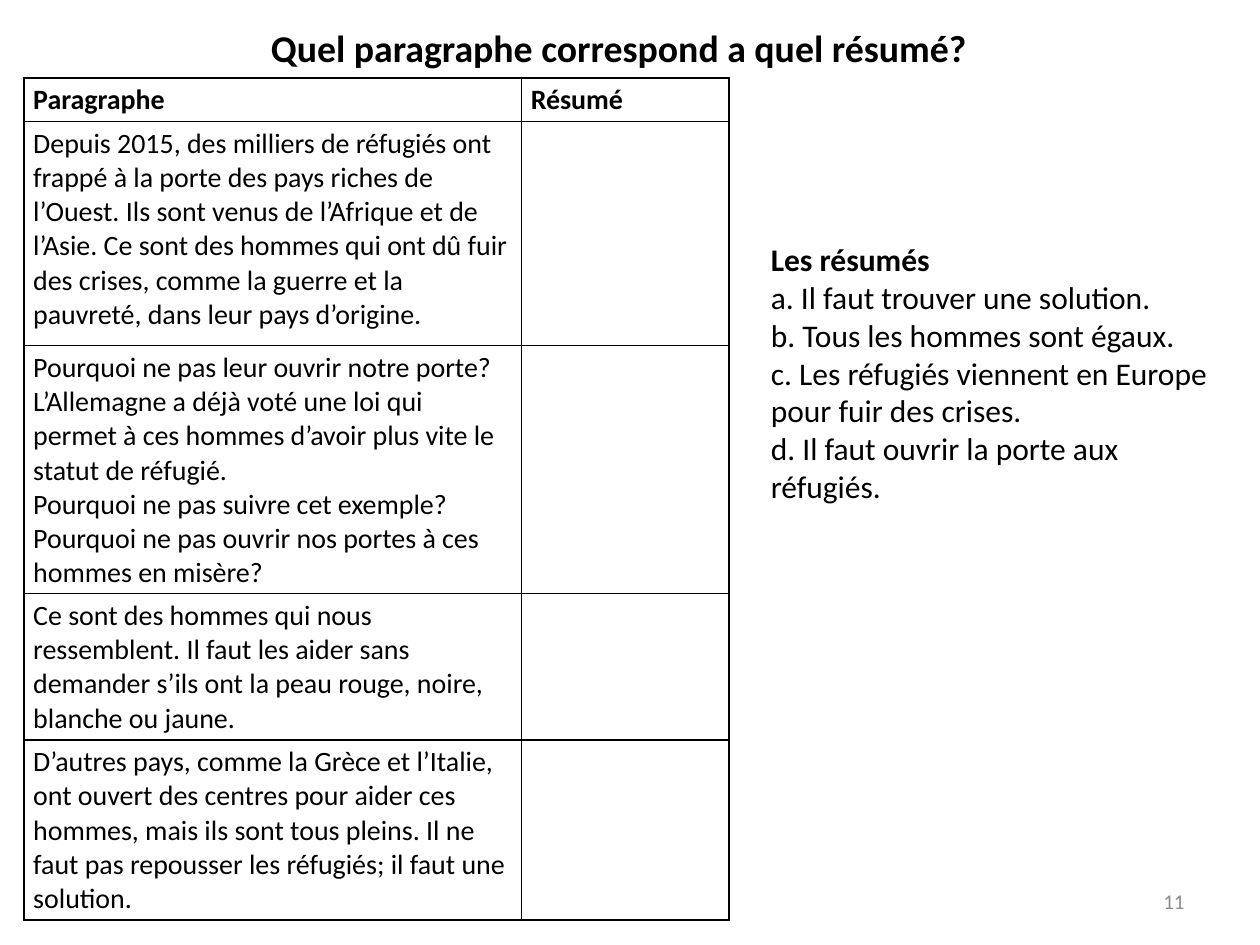
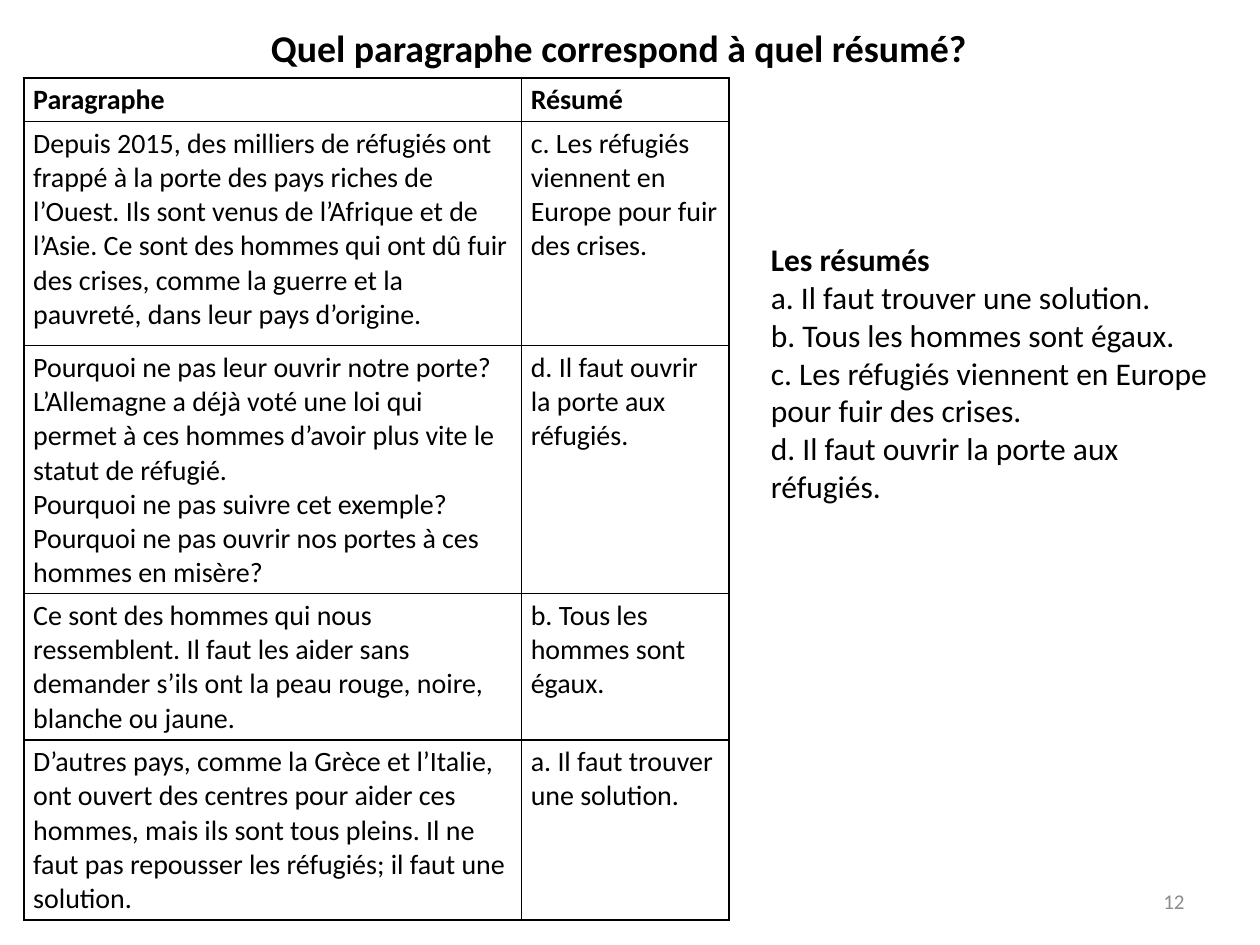
from lxml.etree import SubElement
from pptx import Presentation
from pptx.dml.color import RGBColor
from pptx.enum.text import MSO_ANCHOR, PP_ALIGN
from pptx.oxml.ns import qn
from pptx.util import Cm, Pt

FONT = "Calibri"
BLACK, GREY, WHITE = "000000", "8C8C8C", "FFFFFF"

# Shared wording
HEADERS = ["Paragraphe", "Résumé"]
PARAGRAPHS = [
    ["Depuis 2015, des milliers de réfugiés ont frappé à la porte des pays "
     "riches de l’Ouest. Ils sont venus de l’Afrique et de l’Asie. Ce sont "
     "des hommes qui ont dû fuir des crises, comme la guerre et la pauvreté, "
     "dans leur pays d’origine."],
    ["Pourquoi ne pas leur ouvrir notre porte? L’Allemagne a déjà voté une "
     "loi qui permet à ces hommes d’avoir plus vite le statut de réfugié.",
     "Pourquoi ne pas suivre cet exemple? Pourquoi ne pas ouvrir nos portes "
     "à ces hommes en misère?"],
    ["Ce sont des hommes qui nous ressemblent. Il faut les aider sans "
     "demander s’ils ont la peau rouge, noire, blanche ou jaune."],
    ["D’autres pays, comme la Grèce et l’Italie, ont ouvert des centres pour "
     "aider ces hommes, mais ils sont tous pleins. Il ne faut pas repousser "
     "les réfugiés; il faut une solution."],
]
SUMMARIES = {
    "a": "a. Il faut trouver une solution.",
    "b": "b. Tous les hommes sont égaux.",
    "c": "c. Les réfugiés viennent en Europe pour fuir des crises.",
    "d": "d. Il faut ouvrir la porte aux réfugiés.",
}
ANSWERS = "cdba"

COL_WIDTHS = [10.03, 4.19]
ROW_HEIGHTS = [0.88, 4.52, 5, 2.95, 3.63]


def rgb(value):
    return RGBColor.from_string(value)


def write(tf, lines, size=16, color=BLACK, bold=False, heading=False,
          align=PP_ALIGN.LEFT):
    """Write one paragraph per line; heading makes only the first one bold."""
    for i, line in enumerate(lines):
        p = tf.paragraphs[0] if i == 0 else tf.add_paragraph()
        p.alignment = align
        r = p.add_run()
        r.text = line
        r.font.name = FONT
        r.font.size = Pt(size)
        r.font.bold = bold or (heading and i == 0)
        r.font.color.rgb = rgb(color)


class Deck:
    def __init__(self):
        self.prs = Presentation()
        self.prs.slide_width, self.prs.slide_height = Cm(25.4), Cm(19.05)
        self.s = None

    def new_slide(self):
        self.s = self.prs.slides.add_slide(self.prs.slide_layouts[6])
        fill = self.s.background.fill
        fill.solid()
        fill.fore_color.rgb = rgb(WHITE)

    def text(self, x, y, w, h, lines, anchor=MSO_ANCHOR.TOP, **style):
        sp = self.s.shapes.add_textbox(Cm(x), Cm(y), Cm(w), Cm(h))
        tf = sp.text_frame
        tf.word_wrap = True
        tf.vertical_anchor = anchor
        write(tf, lines, **style)

    def title(self, text):
        self.text(0.48, 0.33, 24, 1.24, [text], MSO_ANCHOR.MIDDLE,
                  size=21.6, bold=True, align=PP_ALIGN.CENTER)

    def number(self, n):
        self.text(18.21, 17.65, 5.92, 1.02, [str(n)], MSO_ANCHOR.MIDDLE,
                  size=12, color=GREY, align=PP_ALIGN.RIGHT)

    def cell(self, cell, lines, bold):
        cell.margin_left = cell.margin_right = Cm(0.19)
        cell.margin_top = cell.margin_bottom = Cm(0.1)
        write(cell.text_frame, lines, bold=bold)
        # Black border on all four sides, then no fill
        tc_pr = cell._tc.get_or_add_tcPr()
        for side in ("lnL", "lnR", "lnT", "lnB"):
            ln = SubElement(tc_pr, qn(f"a:{side}"), w=str(Pt(1)))
            solid = SubElement(ln, qn("a:solidFill"))
            SubElement(solid, qn("a:srgbClr"), val=BLACK)
        cell.fill.background()

    def table(self, x, y, rows):
        frame = self.s.shapes.add_table(
            len(rows), len(COL_WIDTHS), Cm(x), Cm(y),
            Cm(sum(COL_WIDTHS)), Cm(sum(ROW_HEIGHTS)))
        table = frame.table
        table.first_row = table.horz_banding = False
        for column, width in zip(table.columns, COL_WIDTHS):
            column.width = Cm(width)
        for i, (row, height) in enumerate(zip(rows, ROW_HEIGHTS)):
            table.rows[i].height = Cm(height)
            for j, lines in enumerate(row):
                self.cell(table.cell(i, j), lines, bold=i == 0)


def matching_slide(deck, title, number, answers):
    deck.new_slide()
    deck.title(title)
    rows = [[[header] for header in HEADERS]]
    rows += [list(pair) for pair in zip(PARAGRAPHS, answers)]
    deck.table(0.48, 1.57, rows)
    deck.text(15.29, 4.72, 9.86, 5.64,
              ["Les résumés", *SUMMARIES.values()], size=18, heading=True)
    deck.number(number)


def main():
    deck = Deck()
    # Exercise
    matching_slide(deck, "Quel paragraphe correspond a quel résumé?", 11,
                   [[] for _ in ANSWERS])
    # Solution
    matching_slide(deck, "Quel paragraphe correspond à quel résumé?", 12,
                   [[SUMMARIES[letter]] for letter in ANSWERS])
    deck.prs.save("out.pptx")


if __name__ == "__main__":
    main()
